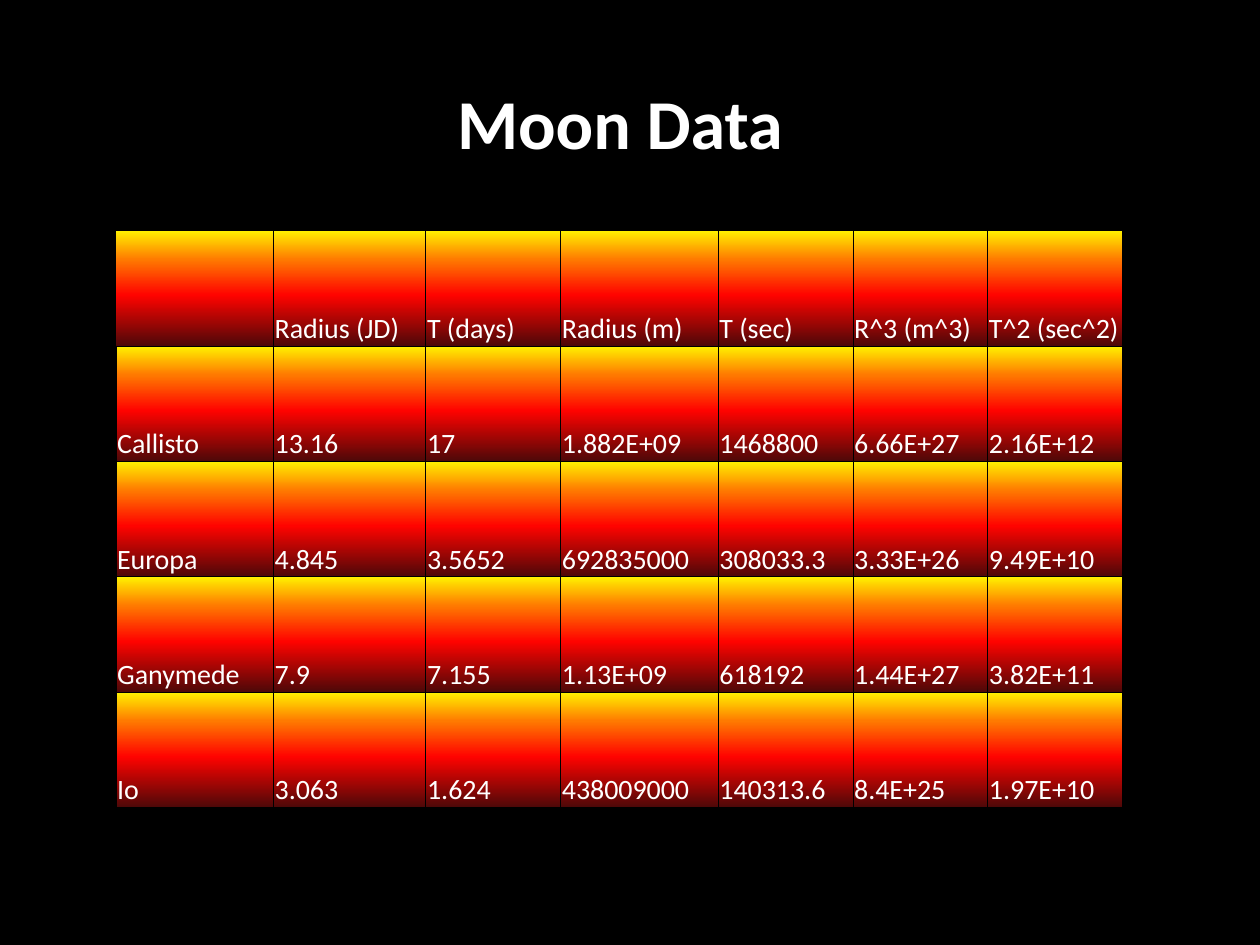
import pptx
import pptx.dml.color
import pptx.enum.text
import pptx.oxml
import pptx.oxml.ns
import pptx.util
from pptx.util import Inches

TITLE = "Moon Data"
ROWS = [
    ("", "Radius (JD)", "T (days)", "Radius (m)", "T (sec)", "R^3 (m^3)", "T^2 (sec^2)"),
    ("Callisto", "13.16", "17", "1.882E+09", "1468800", "6.66E+27", "2.16E+12"),
    ("Europa", "4.845", "3.5652", "692835000", "308033.3", "3.33E+26", "9.49E+10"),
    ("Ganymede", "7.9", "7.155", "1.13E+09", "618192", "1.44E+27", "3.82E+11"),
    ("Io", "3.063", "1.624", "438009000", "140313.6", "8.4E+25", "1.97E+10"),
]
COL_WIDTHS = (1.25, 1.21, 1.07, 1.25, 1.07, 1.07, 1.07)
TABLE_LEFT, TABLE_TOP, TABLE_HEIGHT = 0.92, 1.83, 4.58
COLORS = {"background": "000000", "text": "FFFFFF", "border": "000000",
          "yellow": "FFF200", "orange": "FF7A00", "red": "FF0300", "maroon": "4D0808"}
GRADIENT = ((0, "yellow"), (25, "orange"), (56, "red"), (100, "maroon"))
FONT = "Calibri"
NO_TABLE_STYLE = "{2D5ABB26-0587-4C30-8999-92F81FD0307C}"
NS = pptx.oxml.ns.nsdecls("a")


def rgb(name):
    return pptx.dml.color.RGBColor.from_string(COLORS[name])


def style_font(p, size, bold=False):
    p.font.name = FONT
    p.font.size = pptx.util.Pt(size)
    p.font.bold = bold
    p.font.color.rgb = rgb("text")


def style_cell(cell, sides):
    """Add borders on the given sides, then the gradient, as the schema orders them."""
    tc_pr = cell._tc.get_or_add_tcPr()
    for side in sides:
        tc_pr.append(pptx.oxml.parse_xml(
            f'<a:ln{side} {NS} w="{pptx.util.Pt(0.5)}"><a:solidFill>'
            f'<a:srgbClr val="{COLORS["border"]}"/></a:solidFill></a:ln{side}>'))
    stops = "".join(f'<a:gs pos="{pos * 1000}"><a:srgbClr val="{COLORS[name]}"/></a:gs>'
                    for pos, name in GRADIENT)
    tc_pr.append(pptx.oxml.parse_xml(
        f'<a:gradFill {NS}><a:gsLst>{stops}</a:gsLst>'
        f'<a:lin ang="{90 * 60000}" scaled="0"/></a:gradFill>'))


def add_moon_table(slide):
    table = slide.shapes.add_table(
        len(ROWS), len(COL_WIDTHS), Inches(TABLE_LEFT), Inches(TABLE_TOP),
        Inches(sum(COL_WIDTHS)), Inches(TABLE_HEIGHT)).table
    table.first_row = table.horz_banding = False
    table._tbl.tblPr.find(pptx.oxml.ns.qn("a:tableStyleId")).text = NO_TABLE_STYLE
    for column, width in zip(table.columns, COL_WIDTHS):
        column.width = Inches(width)
    for r, row in enumerate(ROWS):
        for c, text in enumerate(row):
            cell = table.cell(r, c)
            style_cell(cell, "LRTB" if text else "RB")
            if text:
                cell.text = text
                cell.vertical_anchor = pptx.enum.text.MSO_ANCHOR.BOTTOM
                cell.margin_left = cell.margin_right = cell.margin_top = Inches(0.01)
                cell.margin_bottom = 0
                style_font(cell.text_frame.paragraphs[0], 16)


def add_title(slide):
    tf = slide.shapes.add_textbox(Inches(2.67), Inches(0.58),
                                  Inches(4.5), Inches(0.77)).text_frame
    tf.word_wrap = True
    tf.auto_size = pptx.enum.text.MSO_AUTO_SIZE.SHAPE_TO_FIT_TEXT
    p = tf.paragraphs[0]
    p.text = TITLE
    p.alignment = pptx.enum.text.PP_ALIGN.CENTER
    style_font(p, 40, bold=True)


def main():
    prs = pptx.Presentation()
    prs.slide_width, prs.slide_height = Inches(10), Inches(7.5)
    slide = prs.slides.add_slide(prs.slide_layouts[6])
    slide.background.fill.solid()
    slide.background.fill.fore_color.rgb = rgb("background")
    add_moon_table(slide)
    add_title(slide)
    prs.save("out.pptx")


if __name__ == "__main__":
    main()
